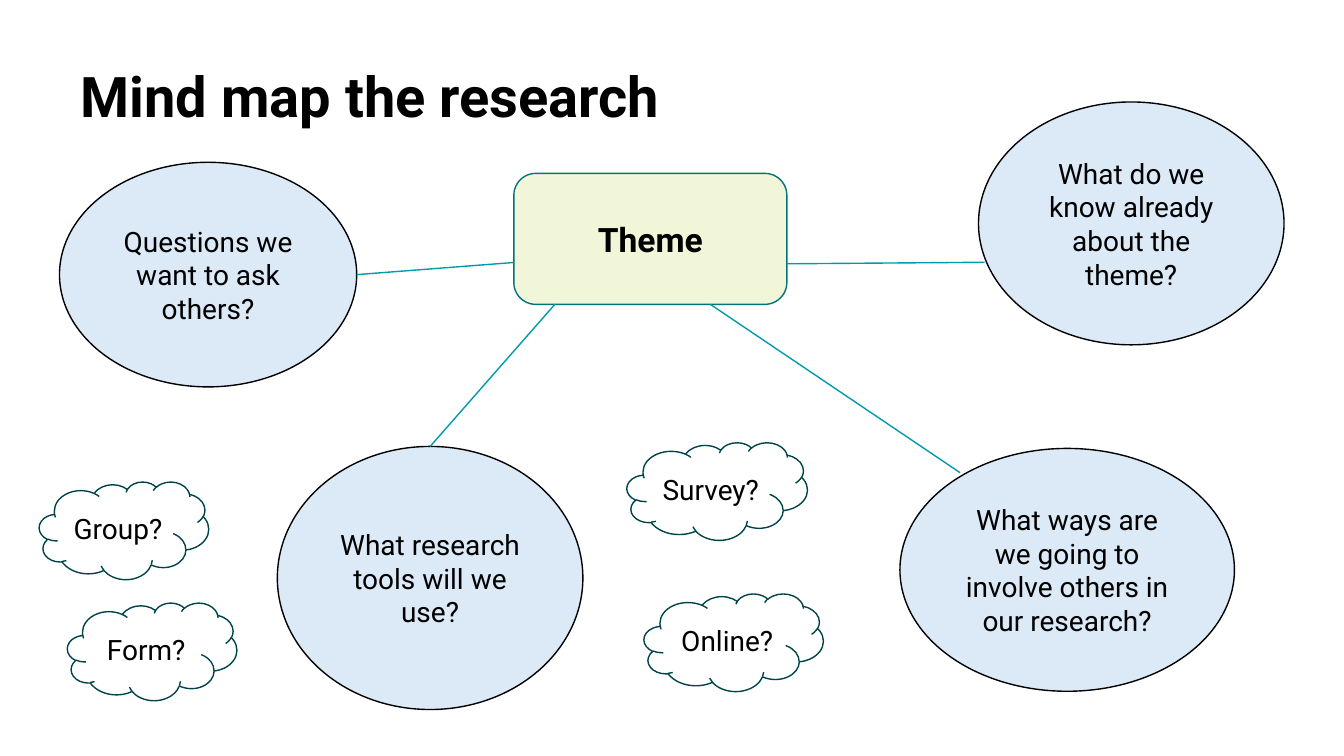
import pptx
import pptx.dml.color
import pptx.enum.shapes
import pptx.enum.text
import pptx.oxml.ns
import pptx.util
import lxml.etree

Cm = pptx.util.Cm
SHAPE = pptx.enum.shapes.MSO_SHAPE
ALIGN = pptx.enum.text.PP_ALIGN
MIDDLE = pptx.enum.text.MSO_ANCHOR.MIDDLE

# Boxes are left, top, width, height in cm
TITLE = (1.78, 1.63, 30.28, 1.73)
THEME = (12.95, 4.37, 6.88, 3.3)

# Text, box, link start as a share of the theme box, link end as a share of the bubble
BUBBLES = [
    ("Questions we want to ask others?", (1.5, 4.09, 7.49, 5.66), (0, 0.68), (1, 0.5)),
    ("What research tools will we use?", (6.99, 11.25, 7.7, 6.63), (0.15, 1), (0.5, 0)),
    ("What ways are we going to involve others in our research?",
     (22.68, 11.3, 8.43, 6.12), (0.72, 1), (0.18, 0.1)),
    ("What do we know already about the theme?", (24.66, 2.57, 7.7, 6.12), (1, 0.69), (0.02, 0.66)),
]
CLOUDS = [
    ("Survey?", (15.8, 11.15, 4.55, 2.46)),
    ("Online?", (16.23, 14.96, 4.52, 2.46)),
    ("Group?", (0.99, 12.14, 4.27, 2.46)),
    ("Form?", (1.7, 15.19, 4.27, 2.46)),
]


def color(value):
    return pptx.dml.color.RGBColor.from_string(value)


def write(sp, text, size, bold=False, align=ALIGN.CENTER):
    tf = sp.text_frame
    tf.word_wrap = True
    tf.vertical_anchor = MIDDLE
    tf.text = text
    p = tf.paragraphs[0]
    p.alignment = align
    p.font.name = "Roboto"
    p.font.size = pptx.util.Pt(size)
    p.font.bold = bold
    p.font.color.rgb = color("000000")
    return p


def add_node(s, kind, box, text, line, fill=None, size=20, bold=False):
    sp = s.shapes.add_shape(kind, *map(Cm, box))
    sp.shadow.inherit = False
    if fill:
        sp.fill.solid()
        sp.fill.fore_color.rgb = color(fill)
    else:
        sp.fill.background()
    sp.line.color.rgb = color(line)
    sp.line.width = pptx.util.Pt(1)
    write(sp, text, size, bold)
    return sp


def point(box, share):
    left, top, width, height = box
    return Cm(left + share[0] * width), Cm(top + share[1] * height)


def add_title(s, box, text):
    sp = s.shapes.title
    sp.left, sp.top, sp.width, sp.height = map(Cm, box)
    write(sp, text, 40, True, ALIGN.LEFT).line_spacing = 0.9


def add_theme(s, box):
    add_node(s, SHAPE.FLOWCHART_ALTERNATE_PROCESS, box, "Theme", "00737E", "F0F6D7", 24, True)


def add_bubble(s, box, text):
    add_node(s, SHAPE.OVAL, box, text, "000000", "DCEAF7")


def add_cloud(s, box, text):
    sp = add_node(s, SHAPE.CLOUD, box, text, "00444B")
    sp.text_frame.margin_left = sp.text_frame.margin_right = 0


def add_link(s, start, end):
    c = s.shapes.add_connector(pptx.enum.shapes.MSO_CONNECTOR.STRAIGHT, *start, *end)
    c.line.color.rgb = color("009BAA")
    c.line.width = pptx.util.Pt(1)
    lxml.etree.SubElement(c._element.spPr, pptx.oxml.ns.qn("a:effectLst"))


def main():
    prs = pptx.Presentation()
    prs.slide_width, prs.slide_height = Cm(33.87), Cm(19.05)
    s = prs.slides.add_slide(prs.slide_layouts[5])

    # Title and central theme
    add_title(s, TITLE, "Mind map the research")
    add_theme(s, THEME)

    # Question bubbles, each linked to the theme
    for text, box, start, end in BUBBLES:
        add_bubble(s, box, text)
        add_link(s, point(THEME, start), point(box, end))

    # Research tool ideas
    for text, box in CLOUDS:
        add_cloud(s, box, text)

    prs.save("out.pptx")


if __name__ == "__main__":
    main()
